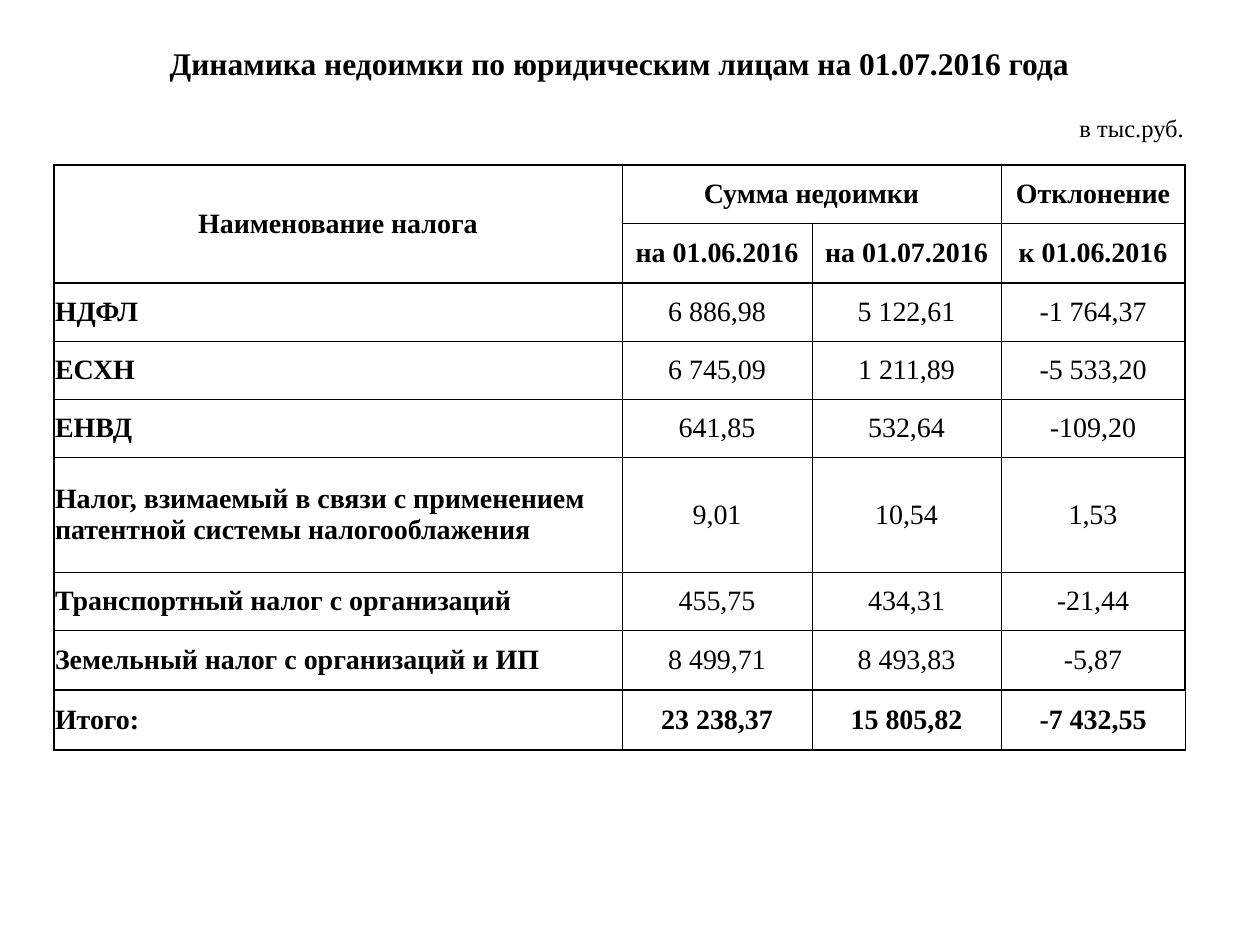
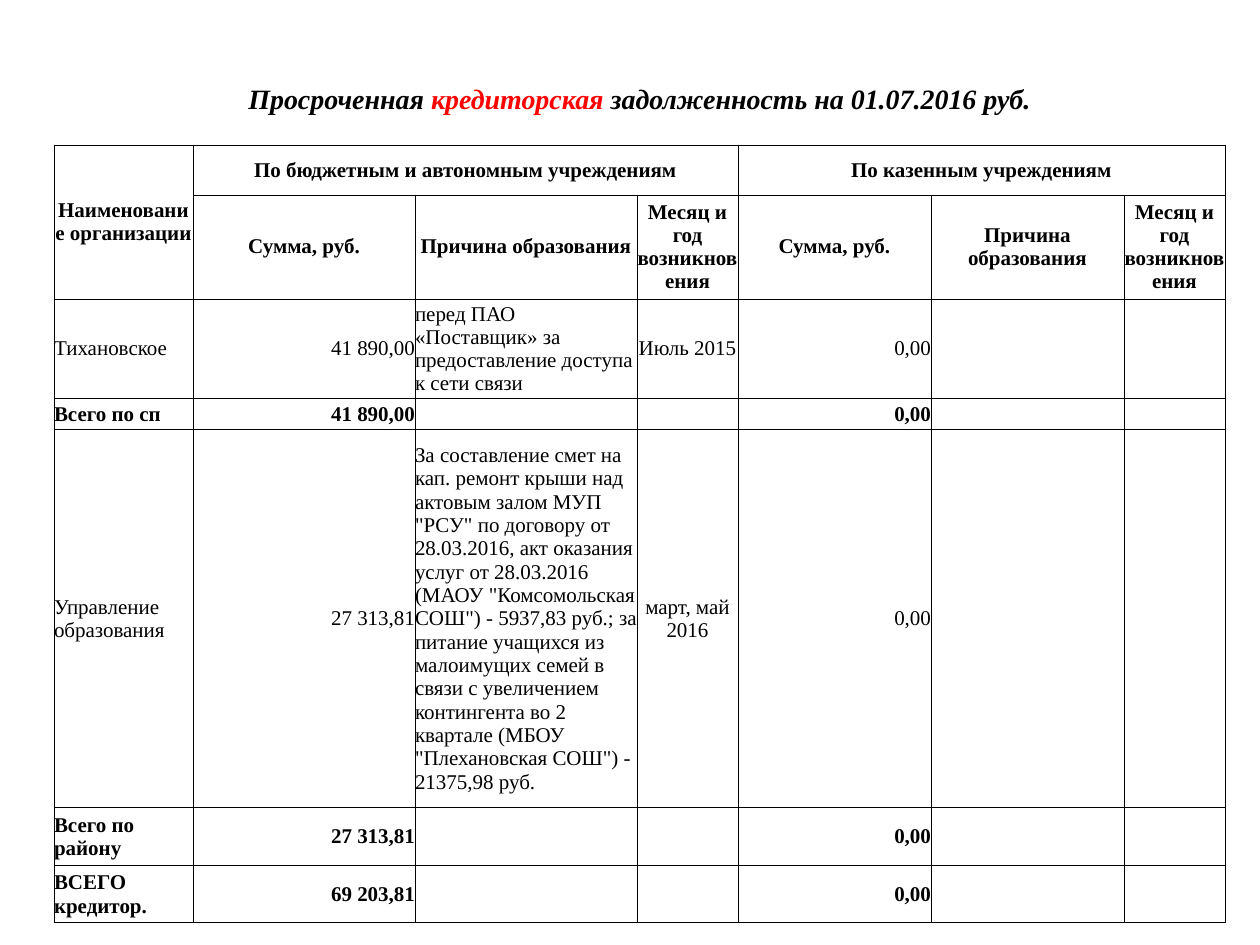
from lxml.etree import SubElement
from pptx import Presentation
from pptx.dml.color import RGBColor
from pptx.enum.text import MSO_ANCHOR as Anchor, PP_ALIGN as Align
from pptx.oxml.ns import qn
from pptx.util import Emu, Pt

FONT = "Times New Roman"
BLACK, RED, WHITE = "000000", "FF0000", "FFFFFF"
THIN, THICK = 0.5, 1
ALIGNS = {"l": Align.LEFT, "c": Align.CENTER, "r": Align.RIGHT}


def px(n):
    return Emu(round(n * 914400 / 126))


def rgb(color):
    return RGBColor.from_string(color)


class Deck:
    def __init__(self):
        self.prs = Presentation()
        self.prs.slide_width, self.prs.slide_height = px(1260), px(945)
        self.s = None

    def slide(self):
        self.s = self.prs.slides.add_slide(self.prs.slide_layouts[6])

    def table(self, left, top, cols, heights, merges):
        frame = self.s.shapes.add_table(len(heights), len(cols), px(left), px(top),
                                        px(sum(cols)), px(sum(heights)))
        tbl = frame.table
        tbl.first_row = tbl.horz_banding = False
        for col, width in zip(tbl.columns, cols):
            col.width = px(width)
        for row, height in zip(tbl.rows, heights):
            row.height = px(height)
        for r1, c1, r2, c2 in merges:
            tbl.cell(r1, c1).merge(tbl.cell(r2, c2))
        return tbl

    def borders(self, cell, widths):
        tc_pr = cell._tc.get_or_add_tcPr()
        for side, width in zip("LRTB", widths):
            ln = SubElement(tc_pr, qn(f"a:ln{side}"), w=str(Pt(width)))
            if width:
                fill = SubElement(ln, qn("a:solidFill"))
                SubElement(fill, qn("a:srgbClr"), val=BLACK)
            else:
                SubElement(ln, qn("a:noFill"))

    def cell(self, cell, widths, inset=0, fill=None):
        self.borders(cell, widths)
        cell.margin_left = cell.margin_right = cell.margin_top = px(inset)
        cell.margin_bottom = 0
        cell.vertical_anchor = Anchor.MIDDLE
        if fill:
            cell.fill.solid()
            cell.fill.fore_color.rgb = rgb(fill)
        else:
            cell.fill.background()

    def text(self, cell, runs, size, align="c", bold=False, italic=False):
        p = cell.text_frame.paragraphs[0]
        p.alignment = ALIGNS[align]
        if not runs:
            SubElement(p._p, qn("a:endParaRPr"), sz=str(size * 100))
        for text, color in runs:
            r = p.add_run()
            r.text = text
            r.font.name, r.font.size = FONT, Pt(size)
            r.font.bold, r.font.italic = bold, italic
            r.font.color.rgb = rgb(color)

    def save(self):
        self.prs.save("out.pptx")


def plain(text):
    return [(text, BLACK)] if text else []


def arrears_slide(deck):
    deck.slide()
    data = [
        ["Динамика недоимки по юридическим лицам на 01.07.2016 года", "", "", ""],
        ["", "", "", "в тыс.руб."],
        ["Наименование налога", "Сумма недоимки", "", "Отклонение"],
        ["", "на 01.06.2016", "на 01.07.2016", "к 01.06.2016"],
        ["НДФЛ", "6 886,98", "5 122,61", "-1 764,37"],
        ["ЕСХН", "6 745,09", "1 211,89", "-5 533,20"],
        ["ЕНВД", "641,85", "532,64", "-109,20"],
        ["Налог, взимаемый в связи с применением патентной системы налогооблажения",
         "9,01", "10,54", "1,53"],
        ["Транспортный налог с организаций", "455,75", "434,31", "-21,44"],
        ["Земельный налог с организаций и ИП", "8 499,71", "8 493,83", "-5,87"],
        ["Итого:", "23 238,37", "15 805,82", "-7 432,55"],
    ]
    heights = [58, 72, 58, 60, 58, 58, 58, 115, 58, 60, 60]
    merges = [(0, 0, 0, 3), (2, 0, 3, 0), (2, 1, 2, 2)]
    tbl = deck.table(54, 35, [568, 190, 189, 184], heights, merges)
    title, units, head, body, total = 0, 1, 2, 4, len(data) - 1
    lines = [0, 0] + [THIN] * len(data)
    for i in (head, body, total, total + 1):
        lines[i] = THICK
    for i, row in enumerate(data):
        for j, text in enumerate(row):
            cell = tbl.cell(i, j)
            left = right = 0
            if i >= head:
                left = THIN if j else THICK
                right = THICK if j == 3 and i < total else THIN
            deck.cell(cell, (left, right, lines[i], lines[i + 1]), inset=1)
            size = {title: 18, units: 14}.get(i, 16)
            align = "r" if i == units else "l" if i >= body and j == 0 else "c"
            bold = i != units and (i < body or i == total or j == 0)
            deck.text(cell, plain(text), size, align, bold)


def payables_slide(deck):
    deck.slide()
    group = ["Сумма, руб.", "Причина образования", "Месяц и год возникновения"]
    phone_debt = "перед ПАО «Поставщик» за предоставление доступа к сети связи"
    school_debt = (
        'За составление смет на кап. ремонт крыши над актовым залом МУП "РСУ" '
        "по договору от 28.03.2016, акт оказания услуг от 28.03.2016 "
        '(МАОУ "Комсомольская СОШ") - 5937,83 руб.; за питание учащихся из '
        "малоимущих семей в связи с увеличением контингента во 2 квартале "
        '(МБОУ "Плехановская СОШ") - 21375,98 руб.')
    data = [
        [""] * 7,
        ["Наименование организации", "По бюджетным и автономным учреждениям", "", "",
         "По казенным учреждениям", "", ""],
        [""] + group * 2,
    ]
    for name, amount, reason, month in [
        ("Тихановское", "41 890,00", phone_debt, "Июль 2015"),
        ("Всего по сп", "41 890,00", "", ""),
        ("Управление образования", "27 313,81", school_debt, "март, май 2016"),
        ("Всего по району", "27 313,81", "", ""),
        ("ВСЕГО кредитор.", "69 203,81", "", ""),
    ]:
        data.append([name, amount, reason, month, "0,00", "", ""])
    title = [("Просроченная ", BLACK), ("кредиторская", RED),
             (" задолженность на 01.07.2016 руб.", BLACK)]
    merges = [(0, 0, 0, 6), (1, 0, 2, 0), (1, 1, 1, 3), (1, 4, 1, 6)]
    tbl = deck.table(54, 55, [139, 222, 222, 101, 193, 193, 101],
                     [90, 50, 104, 100, 31, 378, 58, 57], merges)
    for i, row in enumerate(data):
        widths = (THIN,) * 4 if i else (0, 0, 0, THIN)
        for j, text in enumerate(row):
            cell = tbl.cell(i, j)
            deck.cell(cell, widths, fill=WHITE)
            if (i, j) == (0, 0):
                deck.text(cell, title, 16, bold=True, italic=True)
            else:
                align = "lrlcrlc"[j] if i > 2 else "c"
                deck.text(cell, plain(text), 12, align, bold=i not in (3, 5))


def main():
    deck = Deck()
    arrears_slide(deck)
    payables_slide(deck)
    deck.save()


if __name__ == "__main__":
    main()
